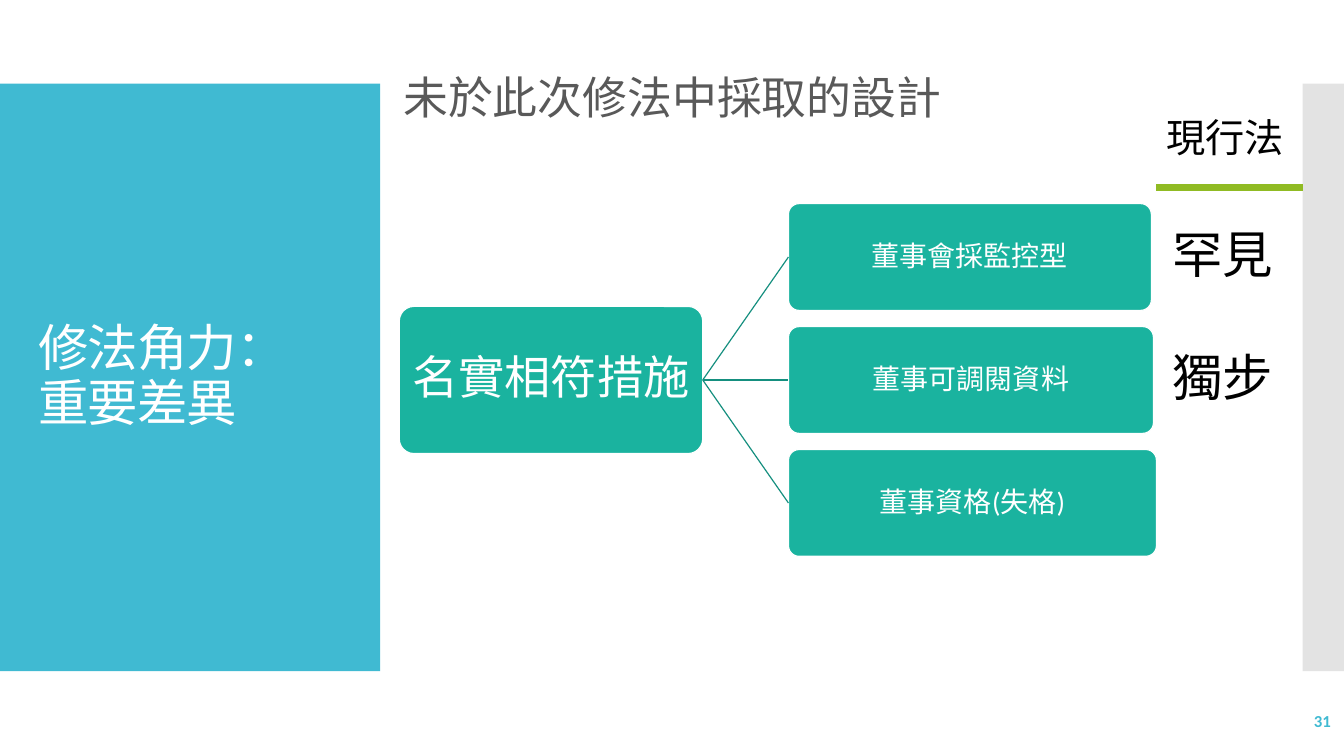
import pptx
import pptx.util
import pptx.dml.color
import pptx.enum.shapes
import pptx.enum.text
import pptx.oxml.ns
import lxml.etree

Inches = pptx.util.Inches
Pt = pptx.util.Pt
RGBColor = pptx.dml.color.RGBColor
SHAPE = pptx.enum.shapes.MSO_SHAPE
STRAIGHT = pptx.enum.shapes.MSO_CONNECTOR.STRAIGHT
ALIGN = pptx.enum.text.PP_ALIGN
ANCHOR = pptx.enum.text.MSO_ANCHOR
qn = pptx.oxml.ns.qn

FONT = "Calibri"
BLUE = RGBColor(0x40, 0xBA, 0xD2)
SILVER = RGBColor(0xC8, 0xC8, 0xC8)
TEAL = RGBColor(0x1A, 0xB3, 0x9F)
DARK_TEAL = RGBColor(0x15, 0x8F, 0x7F)
GREEN = RGBColor(0x90, 0xBB, 0x23)
GREY = RGBColor(0x59, 0x59, 0x59)
WHITE = RGBColor(0xFF, 0xFF, 0xFF)
BLACK = RGBColor(0, 0, 0)

MEASURES = [("董事會採監控型", 3.6), ("董事可調閱資料", 3.62), ("董事資格(失格)", 3.65)]
PRACTICES = ["罕見", "獨步"]
ROW_TOP, ROW_PITCH, ROW_HEIGHT = 2.02, 1.22, 1.06


def write(shape, text, size, color, bold=False, align=ALIGN.LEFT, anchor=ANCHOR.TOP,
          line_spacing=None, space_before=None, tracking=None, inset=None):
    frame = shape.text_frame
    frame.word_wrap = True
    frame.auto_size = pptx.enum.text.MSO_AUTO_SIZE.NONE
    frame.vertical_anchor = anchor
    if inset is not None:
        frame.margin_left = frame.margin_right = Inches(inset)
        frame.margin_top = frame.margin_bottom = Inches(inset)
    paragraph = frame.paragraphs[0]
    paragraph.text = text
    paragraph.alignment = align
    paragraph.line_spacing = line_spacing
    paragraph.space_before = space_before
    for run in paragraph.runs:
        run.font.name = FONT
        run.font.size = Pt(size)
        run.font.bold = bold
        run.font.color.rgb = color
        if tracking:
            run.font._element.set("spc", str(int(tracking * 100)))
    # Line breaks take the text size too
    for line_break in paragraph._p.findall(qn("a:br")):
        lxml.etree.SubElement(line_break, qn("a:rPr")).set("sz", str(size * 100))
    return paragraph


def place(shape, left, top, width, height):
    shape.left, shape.top = Inches(left), Inches(top)
    shape.width, shape.height = Inches(width), Inches(height)


def add_box(slide, kind, left, top, width, height, fill):
    box = slide.shapes.add_shape(kind, Inches(left), Inches(top), Inches(width), Inches(height))
    box.shadow.inherit = False
    box.fill.solid()
    box.fill.fore_color.rgb = fill
    box.line.fill.background()
    return box


def add_label(slide, left, top, width, height, text, size, color, **style):
    label = slide.shapes.add_textbox(Inches(left), Inches(top), Inches(width), Inches(height))
    write(label, text, size, color, **style)


def add_line(slide, start, end, color, weight):
    line = slide.shapes.add_connector(STRAIGHT, *(Inches(n) for n in start + end))
    line.line.color.rgb = color
    line.line.width = Pt(weight)
    lxml.etree.SubElement(line._element.spPr, qn("a:effectLst"))
    return line


def add_node(slide, left, top, width, height, text, size, inset):
    node = add_box(slide, SHAPE.ROUNDED_RECTANGLE, left, top, width, height, TEAL)
    node.adjustments[0] = 0.1
    node.line.color.rgb = WHITE
    node.line.width = Pt(0.85)
    write(node, text, size, WHITE, align=ALIGN.CENTER, anchor=ANCHOR.MIDDLE,
          line_spacing=0.9, inset=inset)
    return node


def build_panels(slide, top, height):
    add_box(slide, SHAPE.RECTANGLE, 0, top, 3.77, height, BLUE)
    side_bar = add_box(slide, SHAPE.RECTANGLE, 12.92, top, 0.41, height, SILVER)
    side_color = side_bar._element.spPr.find(qn("a:solidFill"))[0]
    lxml.etree.SubElement(side_color, qn("a:alpha")).set("val", "50000")


def build_headings(slide):
    title, subject = slide.placeholders
    # Bring both in front of the panels
    for heading in (title, subject):
        slide.shapes._spTree.append(heading._element)
    place(title, 0.28, 1.23, 3.22, 5.03)
    write(title, "修法角力：\v重要差異", 36, WHITE, anchor=ANCHOR.MIDDLE,
          line_spacing=0.9, tracking=-0.6)
    place(subject, 3.9, 0.75, 8, 2.07)
    paragraph = write(subject, "未於此次修法中採取的設計", 32, GREY,
                      line_spacing=0.9, space_before=Pt(12))
    subject.text_frame.margin_top = 0
    properties = paragraph._p.get_or_add_pPr()
    properties.set("marL", "0")
    properties.set("indent", "0")
    lxml.etree.SubElement(properties, qn("a:buNone"))


def build_tree(slide, root_left, branch_left):
    root_height = 1.46
    middle = ROW_TOP + ROW_PITCH + ROW_HEIGHT / 2
    root = add_node(slide, root_left, middle - root_height / 2, 3.01, root_height,
                    "名實相符措施", 33, 0.06)
    for row, (measure, width) in enumerate(MEASURES):
        branch = add_node(slide, branch_left, ROW_TOP + row * ROW_PITCH, width, ROW_HEIGHT,
                          measure, 20, 0.04)
        link = add_line(slide, (0, 0), (1, 1), DARK_TEAL, 0.85)
        link.begin_connect(root, 3)
        link.end_connect(branch, 1)


def build_current_law(slide, left, width):
    add_label(slide, left, 1.08, width, 0.57, "現行法", 28, BLACK)
    add_line(slide, (left, 1.86), (left + width, 1.86), GREEN, 5.25)
    for row, practice in enumerate(PRACTICES):
        add_label(slide, left + 0.06, ROW_TOP + 0.14 + row * ROW_PITCH, 1.25, 0.71,
                  practice, 36, BLACK)


def main():
    deck = pptx.Presentation()
    deck.slide_width, deck.slide_height = Inches(13.33), Inches(7.5)
    slide = deck.slides.add_slide(deck.slide_layouts[1])
    build_panels(slide, 0.83, 5.83)
    build_headings(slide)
    build_tree(slide, 3.96, 7.82)
    build_current_law(slide, 11.47, 1.45)
    # Page number
    add_label(slide, 11.63, 6.95, 1.67, 0.4, "31", 12, BLUE, bold=True,
              align=ALIGN.RIGHT, anchor=ANCHOR.MIDDLE)
    deck.save("out.pptx")


if __name__ == "__main__":
    main()
